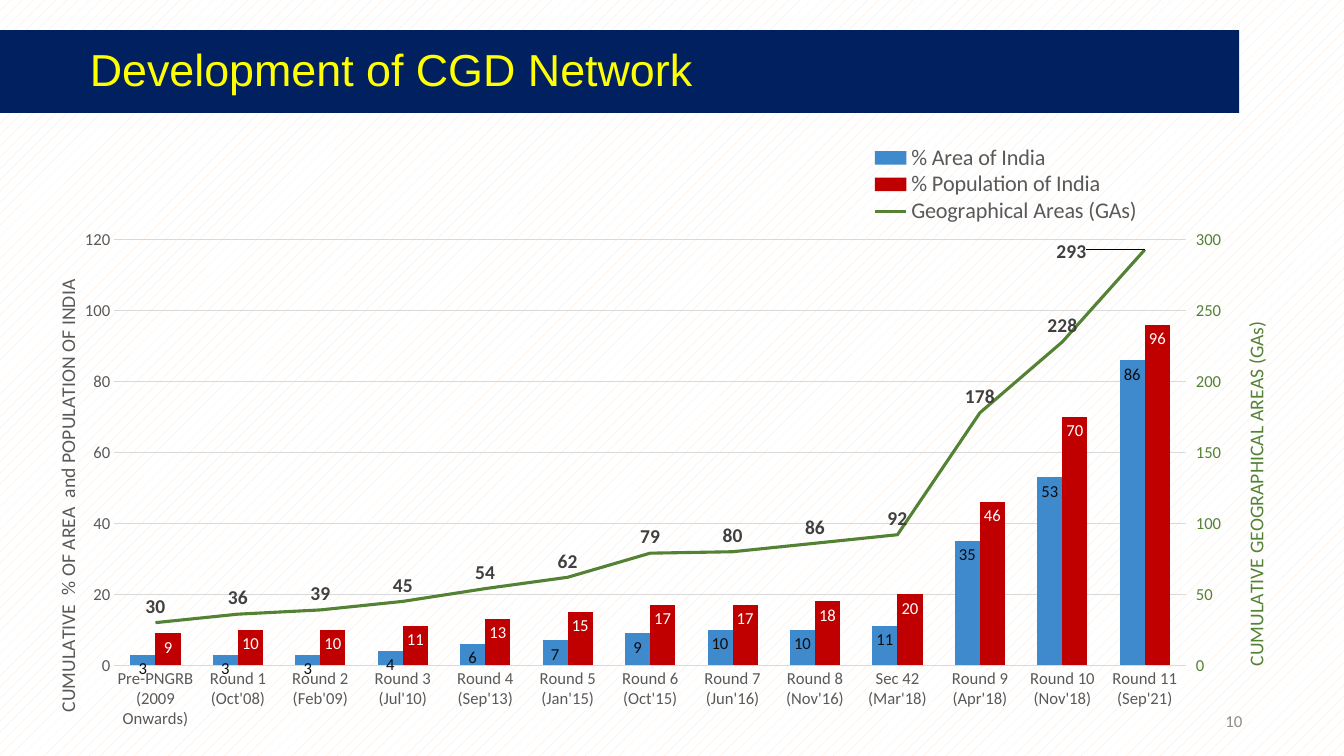
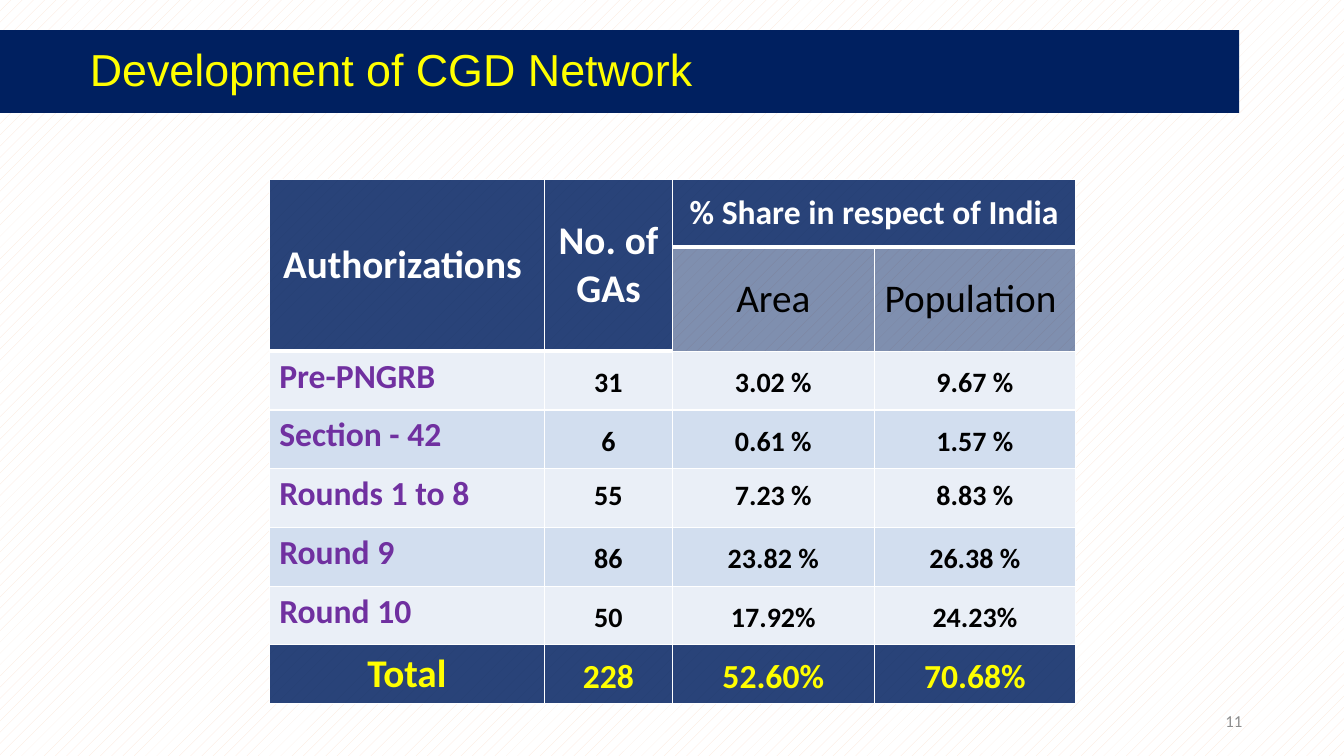
from dataclasses import dataclass

from lxml.etree import SubElement
from pptx import Presentation
from pptx.chart.axis import ValueAxis
from pptx.chart.data import CategoryChartData
from pptx.dml.color import RGBColor
from pptx.enum.chart import (XL_CHART_TYPE, XL_LABEL_POSITION,
                             XL_LEGEND_POSITION, XL_MARKER_STYLE, XL_TICK_MARK)
from pptx.enum.dml import MSO_PATTERN
from pptx.enum.text import MSO_ANCHOR, MSO_AUTO_SIZE, PP_ALIGN
from pptx.oxml import parse_xml
from pptx.oxml.ns import nsdecls, qn
from pptx.util import Inches, Pt

NAVY, YELLOW, WHITE, BLACK = "002060", "FFFF00", "FFFFFF", "000000"
PURPLE, GREEN, GREY, GRID = "7030A0", "548235", "595959", "D9D9D9"
BODY_FONT = "Calibri"


@dataclass
class Series:
    name: str
    values: tuple
    color: str
    label_color: str
    label_size: int = 12
    label_bold: bool = False
    label_position: XL_LABEL_POSITION = XL_LABEL_POSITION.INSIDE_END


@dataclass
class AuthorizationRow:
    name: str
    values: tuple
    fill: str
    space_after: int = 2
    centred: bool = True


@dataclass
class CellStyle:
    size: int
    color: str
    fill: str
    alpha: int = 100
    bold: bool = True
    align: PP_ALIGN = PP_ALIGN.CENTER
    anchor: MSO_ANCHOR = MSO_ANCHOR.MIDDLE


ROUNDS = ("Pre-PNGRB (2009 Onwards)", "Round 1 (Oct'08)", "Round 2 (Feb'09)",
          "Round 3 (Jul'10)", "Round 4 (Sep'13)", "Round 5 (Jan'15)",
          "Round 6 (Oct'15)", "Round 7 (Jun'16)", "Round 8 (Nov'16)",
          "Sec 42 (Mar'18)", "Round 9 (Apr'18)", "Round 10 (Nov'18)",
          "Round 11 (Sep'21)")
SERIES = (
    Series("% Area of India", (3, 3, 3, 4, 6, 7, 9, 10, 10, 11, 35, 53, 86),
           "3F8ACD", "0D0D0D"),
    Series("% Population of India",
           (9, 10, 10, 11, 13, 15, 17, 17, 18, 20, 46, 70, 96), "C00000", WHITE),
    Series("Geographical Areas (GAs)",
           (30, 36, 39, 45, 54, 62, 79, 80, 86, 92, 178, 228, 293),
           GREEN, "404040", 14, True, XL_LABEL_POSITION.ABOVE),
)
LIGHT_BAND, DARK_BAND = "EAEFF7", "D2DEEF"
AUTHORIZATIONS = (
    AuthorizationRow("Pre-PNGRB", ("31", "3.02 %", "9.67 %"), LIGHT_BAND, 0),
    AuthorizationRow("Section - 42", ("6", "0.61 %", "1.57 %"), DARK_BAND),
    AuthorizationRow("Rounds 1 to 8", ("55", "7.23 %", "8.83 %"), LIGHT_BAND,
                     centred=False),
    AuthorizationRow("Round 9", ("86", "23.82 %", "26.38 %"), DARK_BAND),
    AuthorizationRow("Round 10", ("50", "17.92%", "24.23%"), LIGHT_BAND),
)
TOTALS = ("228", "52.60%", "70.68%")


def rgb(color: str) -> RGBColor:
    return RGBColor.from_string(color)


def style_font(font, size: float, color: str, bold: bool = False,
               name: str = BODY_FONT) -> None:
    font.size, font.bold, font.name = Pt(size), bold, name
    font.color.rgb = rgb(color)


def add_run(p, text: str, size: float, color: str, bold: bool = False,
            name: str = BODY_FONT) -> None:
    r = p.add_run()
    r.text = text
    style_font(r.font, size, color, bold, name)


# Shared slide frame: background, title band, page number
def add_slide(prs, title: str, number: int):
    s = prs.slides.add_slide(prs.slide_layouts[5])
    fill = s.background.fill
    fill.patterned()
    fill.pattern = MSO_PATTERN.PERCENT_10
    fill.fore_color.rgb, fill.back_color.rgb = rgb("FBE5D6"), rgb(WHITE)

    sp = s.shapes.title
    sp.left, sp.top = Inches(0), Inches(0.3)
    sp.width, sp.height = Inches(12.29), Inches(0.82)
    sp.fill.solid()
    sp.fill.fore_color.rgb = rgb(NAVY)
    tf = sp.text_frame
    tf.auto_size, tf.vertical_anchor = MSO_AUTO_SIZE.NONE, MSO_ANCHOR.MIDDLE
    p = tf.paragraphs[0]
    p.alignment, p.line_spacing = PP_ALIGN.LEFT, 0.9
    p.space_before = Pt(0)
    pPr = p._p.get_or_add_pPr()
    pPr.set("marL", str(Inches(0.79)))
    pPr.set("indent", "0")
    add_run(p, title, 32, YELLOW, name="Arial")

    tf = s.shapes.add_textbox(Inches(9.42), Inches(6.95), Inches(3),
                              Inches(0.4)).text_frame
    tf.word_wrap, tf.vertical_anchor = True, MSO_ANCHOR.MIDDLE
    p = tf.paragraphs[0]
    p.alignment = PP_ALIGN.RIGHT
    add_run(p, str(number), 12, "8C8C8C")
    return s


# Chart helpers
def place(element, index: int, x: float, y: float, size: tuple = (),
          inner: bool = False, edge: bool = True) -> None:
    """Give a chart part a manual layout, in fractions of the chart."""
    for old in element.findall(qn("c:layout")):
        element.remove(old)
    layout = parse_xml(f"<c:layout {nsdecls('c')}><c:manualLayout/></c:layout>")
    settings = [("layoutTarget", "inner")] if inner else []
    if edge:
        settings += [("xMode", "edge"), ("yMode", "edge")]
    settings += [("x", x), ("y", y), *zip("wh", size)]
    for tag, value in settings:
        SubElement(layout[0], qn(f"c:{tag}")).set("val", str(value))
    element.insert(index, layout)


def style_value_axis(axis, title: str, color: str, maximum: int, unit: int,
                     x: float, y: float) -> None:
    axis.minimum_scale, axis.maximum_scale, axis.major_unit = 0, maximum, unit
    axis.format.line.fill.background()
    style_font(axis.tick_labels.font, 12, color)
    tf = axis.axis_title.text_frame
    add_run(tf.paragraphs[0], title, 14, color)
    body = tf._txBody.bodyPr
    body.set("rot", "-5400000")
    body.set("vert", "horz")
    place(axis.axis_title._element, 1, x, y)


def move_to_right_axis(chart) -> ValueAxis:
    """Turn the last column series into a line on a second value axis."""
    ns = nsdecls("c")
    bar = chart.element.xpath("//c:barChart")[0]
    ser = bar.findall(qn("c:ser"))[-1]
    for tag in ser.findall(qn("c:invertIfNegative")):
        ser.remove(tag)
    line = parse_xml(
        f'<c:lineChart {ns}><c:grouping val="standard"/><c:varyColors val="0"/>'
        '<c:marker val="1"/><c:axId val="5001"/><c:axId val="5002"/></c:lineChart>')
    line.insert(2, ser)
    bar.addnext(line)
    cat_axis = parse_xml(
        f'<c:catAx {ns}><c:axId val="5001"/><c:scaling/><c:delete val="1"/>'
        '<c:axPos val="b"/><c:crossAx val="5002"/></c:catAx>')
    val_axis = parse_xml(
        f'<c:valAx {ns}><c:axId val="5002"/><c:scaling/><c:delete val="0"/>'
        '<c:axPos val="r"/><c:numFmt formatCode="General" sourceLinked="0"/>'
        '<c:majorTickMark val="out"/><c:minorTickMark val="none"/>'
        '<c:tickLblPos val="nextTo"/><c:crossAx val="5001"/>'
        '<c:crosses val="max"/><c:crossBetween val="between"/></c:valAx>')
    chart.value_axis._element.addnext(val_axis)
    val_axis.addnext(cat_axis)
    return ValueAxis(val_axis)


def hide_leader_lines(labels) -> None:
    labels._element.append(parse_xml(
        f'<c:extLst {nsdecls("c")}>'
        '<c:ext uri="{CE6537A1-D6FC-4f65-9D91-7224C49458BB}" '
        'xmlns:c15="http://schemas.microsoft.com/office/drawing/2012/chart">'
        '<c15:showLeaderLines val="0"/></c:ext></c:extLst>'))


def add_network_chart(s) -> None:
    data = CategoryChartData()
    data.categories = ROUNDS
    for item in SERIES:
        data.add_series(item.name, item.values)
    chart = s.shapes.add_chart(XL_CHART_TYPE.COLUMN_CLUSTERED, Inches(0.38),
                               Inches(1.31), Inches(12.26), Inches(6.04),
                               data).chart
    style_font(chart.font, 10, BLACK)
    chart.has_title = False
    left_axis = chart.value_axis
    right_axis = move_to_right_axis(chart)
    columns, lines = chart.plots
    columns.gap_width, columns.overlap = 129, 0
    columns.vary_by_categories = False
    place(chart.element.xpath("//c:plotArea")[0], 0, 0.062, 0.177,
          (0.875, 0.699), inner=True)

    # Axes
    axis = chart.category_axis
    axis.major_tick_mark = XL_TICK_MARK.NONE
    axis.format.line.color.rgb, axis.format.line.width = rgb(GRID), Pt(0.75)
    style_font(axis.tick_labels.font, 12, GREY)
    left_axis.major_tick_mark = XL_TICK_MARK.NONE
    grid = left_axis.major_gridlines.format.line
    grid.color.rgb, grid.width = rgb(GRID), Pt(0.75)
    style_value_axis(left_axis, "CUMULATIVE  % OF AREA  and POPULATION OF INDIA",
                     GREY, 120, 20, 0.01, 0.23)
    style_value_axis(right_axis, "CUMULATIVE GEOGRAPHICAL AREAS (GAs)",
                     GREEN, 300, 50, 0.98, 0.3)

    # Series and their labels
    for item, ser in zip(SERIES, [*columns.series, *lines.series]):
        labels = ser.data_labels
        labels.show_value, labels.position = True, item.label_position
        style_font(labels.font, item.label_size, item.label_color, item.label_bold)
    for item, ser in zip(SERIES, columns.series):
        ser.format.fill.solid()
        ser.format.fill.fore_color.rgb = rgb(item.color)
    areas, item = lines.series[0], SERIES[-1]
    areas.smooth = False
    areas.marker.style = XL_MARKER_STYLE.NONE
    areas.format.line.color.rgb, areas.format.line.width = rgb(GREEN), Pt(2.25)
    last = areas.points[len(ROUNDS) - 1].data_label
    last.position = item.label_position
    style_font(last.font, item.label_size, item.label_color, item.label_bold)
    place(chart.element.xpath("//c:dLbl")[0], 1, -0.06, 0.03, edge=False)
    hide_leader_lines(areas.data_labels)

    # Legend
    chart.has_legend = True
    legend = chart.legend
    legend.position, legend.include_in_layout = XL_LEGEND_POSITION.BOTTOM, False
    style_font(legend.font, 16, GREY)
    place(legend._element, 1, 0.67, 0.02, (0.24, 0.13))


# Table helpers
def fill_cell(cell, text: str, style: CellStyle):
    cell.fill.solid()
    cell.fill.fore_color.rgb = rgb(style.fill)
    if style.alpha < 100:
        clr = cell._tc.tcPr.find(qn("a:solidFill"))[0]
        SubElement(clr, qn("a:alpha")).set("val", str(style.alpha * 1000))
    cell.vertical_anchor = style.anchor
    p = cell.text_frame.paragraphs[0]
    p.alignment = style.align
    add_run(p, text, style.size, style.color, style.bold)
    return p


def fill_value(cell, text: str, style: CellStyle, space_after: int = 2) -> None:
    p = fill_cell(cell, text, style)
    p.line_spacing, p.space_after = 1.15, Pt(space_after)
    if style.anchor == MSO_ANCHOR.MIDDLE:
        cell.margin_left = cell.margin_right = Inches(0.07)
        cell.margin_top = cell.margin_bottom = Inches(0)


def set_borders(cell, bottom: float) -> None:
    tcPr = cell._tc.get_or_add_tcPr()
    for i, (side, width) in enumerate((("L", 1), ("R", 1), ("B", bottom))):
        tcPr.insert(i, parse_xml(
            f'<a:ln{side} {nsdecls("a")} w="{Pt(width)}"><a:solidFill>'
            f'<a:srgbClr val="{WHITE}"/></a:solidFill></a:ln{side}>'))


def add_share_table(s) -> None:
    table = s.shapes.add_table(8, 4, Inches(2.67), Inches(1.78), Inches(8),
                               Inches(4.75)).table
    table.first_row = table.horz_banding = False
    for column, width in zip(table.columns, (2.73, 1.27, 2, 2)):
        column.width = Inches(width)
    for i, row in enumerate(table.rows):
        row.height = Inches((4.75 - 0.67) / 7 if i else 0.67)

    # Header rows
    for first, end in (((0, 0), (1, 0)), ((0, 1), (1, 1)), ((0, 2), (0, 3))):
        table.cell(*first).merge(table.cell(*end))
    head = CellStyle(28, WHITE, NAVY, 84)
    fill_cell(table.cell(0, 0), "Authorizations ", head)
    fill_cell(table.cell(0, 1), "No. of GAs", head)
    fill_cell(table.cell(0, 2), "% Share in respect of India",
              CellStyle(24, WHITE, NAVY, 84))
    for col, text in ((2, "Area"), (3, "Population ")):
        fill_cell(table.cell(1, col), text, CellStyle(28, BLACK, NAVY, 50, False))

    # Body rows
    for i, row in enumerate(AUTHORIZATIONS, 2):
        fill_cell(table.cell(i, 0), row.name,
                  CellStyle(24, PURPLE, row.fill, align=PP_ALIGN.LEFT,
                            anchor=MSO_ANCHOR.TOP))
        anchor = MSO_ANCHOR.MIDDLE if row.centred else MSO_ANCHOR.TOP
        for col, text in enumerate(row.values, 1):
            fill_value(table.cell(i, col), text,
                       CellStyle(20, BLACK, row.fill, anchor=anchor),
                       row.space_after)

    # Total row
    fill_cell(table.cell(7, 0), "Total",
              CellStyle(28, YELLOW, NAVY, 84, anchor=MSO_ANCHOR.TOP))
    for col, text in enumerate(TOTALS, 1):
        fill_value(table.cell(7, col), text, CellStyle(24, YELLOW, NAVY, 84))

    for i in range(8):
        for col in range(4):
            set_borders(table.cell(i, col), 3 if i == 0 or (i == 1 and col < 2) else 1)


def main() -> None:
    prs = Presentation()
    prs.slide_width, prs.slide_height = Inches(13.33), Inches(7.5)
    for number, draw in enumerate((add_network_chart, add_share_table), 10):
        draw(add_slide(prs, "Development of CGD Network", number))
    prs.save("out.pptx")


if __name__ == "__main__":
    main()
